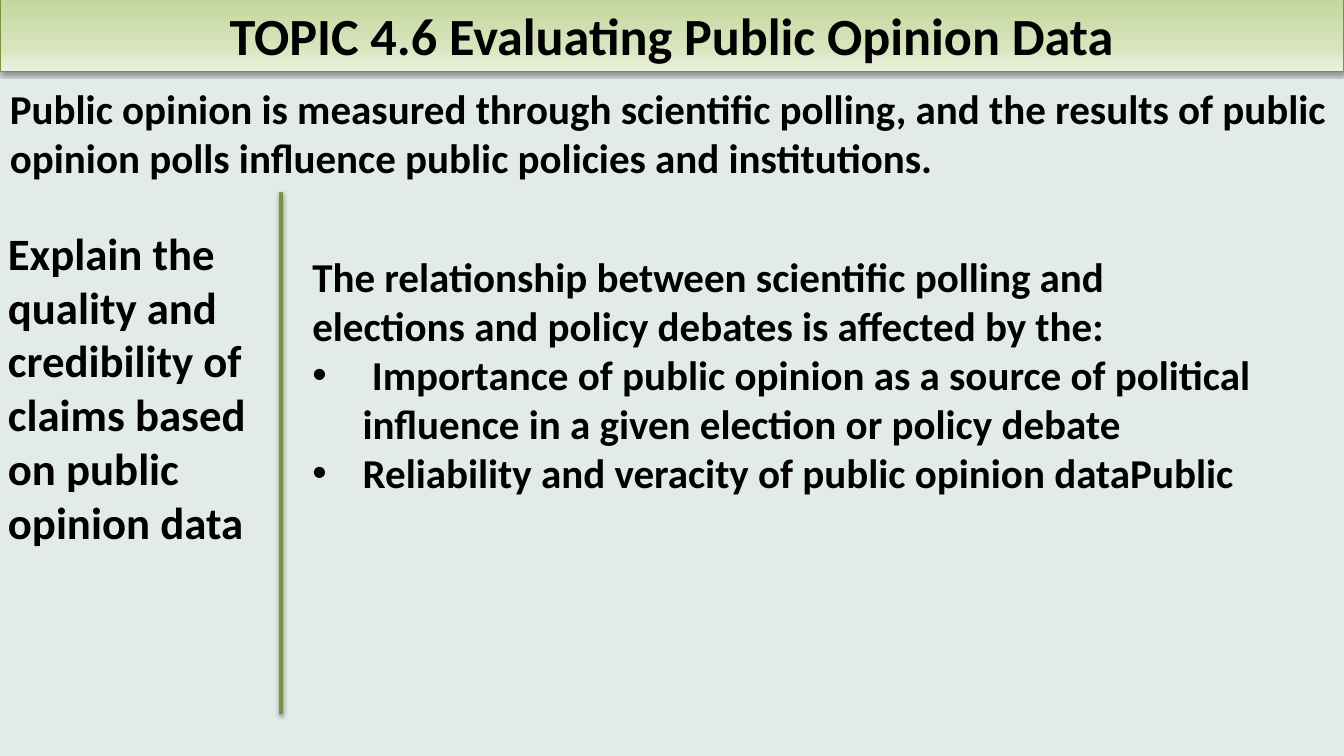
"""Build the slide on evaluating public opinion data."""
import dataclasses

import lxml.etree
import pptx
import pptx.dml.color
import pptx.enum.shapes
import pptx.enum.text
import pptx.oxml
import pptx.oxml.ns
import pptx.util

Cm = pptx.util.Cm
Pt = pptx.util.Pt
RGB = pptx.dml.color.RGBColor.from_string
qn = pptx.oxml.ns.qn

TITLE = "TOPIC 4.6 Evaluating Public Opinion Data"
LEAD = ["Public opinion is measured through scientific polling, and the results of "
        "public opinion polls influence public policies and institutions."]
GOAL = ["Explain the quality and credibility of claims based on public opinion data"]
CLAIM = ["The relationship between scientific polling and",
         "elections and policy debates is affected by the:"]
POINTS = [" Importance of public opinion as a source of political influence in a "
          "given election or policy debate",
          "Reliability and veracity of public opinion dataPublic"]

WIDE, HIGH = 33.87, 19.05
RULE_X, BODY_X = 7.09, 7.62
INDENT = 1.27


@dataclasses.dataclass
class Theme:
    """Hold the colours and type sizes."""
    font: str = "Calibri"
    back: str = "E3EBE9"
    ink: str = "000000"
    edge: str = "77933C"
    band: tuple = ((0, "EBF1DE"), (35, "D7E4BD"), (100, "C3D69B"))
    title: float = 37.3
    goal: float = 32
    body: float = 29.3


THEME = Theme()


def style(para, size):
    """Set the type of a paragraph."""
    font = para.font
    font.name, font.size, font.bold = THEME.font, Pt(size), True
    font.color.rgb = RGB(THEME.ink)


def shade(shape, alpha, dist):
    """Give a shape a soft shadow that falls straight down."""
    props = shape._element.spPr
    for old in props.findall(qn("a:effectLst")):
        props.remove(old)
    effect = lxml.etree.SubElement(props, qn("a:effectLst"))
    drop = lxml.etree.SubElement(
        effect, qn("a:outerShdw"), blurRad=str(Pt(3.1)), dist=str(Pt(dist)),
        dir="5400000", rotWithShape="0")
    tint = lxml.etree.SubElement(drop, qn("a:srgbClr"), val=THEME.ink)
    lxml.etree.SubElement(tint, qn("a:alpha"), val=str(alpha * 1000))


def blend(fill, shape):
    """Fill a shape with the title band's gradient, lightest at the foot."""
    fill.gradient()
    fill.gradient_angle = 90
    stops = shape._element.spPr.find(qn("a:gradFill")).find(qn("a:gsLst"))
    for old in list(stops):
        stops.remove(old)
    for place, tone in THEME.band:
        stop = lxml.etree.SubElement(stops, qn("a:gs"), pos=str(place * 1000))
        lxml.etree.SubElement(stop, qn("a:srgbClr"), val=tone)


def bullet(para):
    """Hang a paragraph behind a round bullet."""
    props = para._p.get_or_add_pPr()
    props.set("marL", str(Cm(INDENT)))
    props.set("indent", str(-Cm(INDENT)))
    font = lxml.etree.Element(qn("a:buFont"), typeface="Arial")
    mark = lxml.etree.Element(qn("a:buChar"), char="•")
    props.insert(0, font)
    props.insert(1, mark)


def write(slide, box, size, lines, points=()):
    """Add a text box of plain lines followed by bulleted points."""
    frame = slide.shapes.add_textbox(*map(Cm, box)).text_frame
    frame.word_wrap = True
    frame.text = "\n".join([*lines, *points])
    for spot, para in enumerate(frame.paragraphs):
        style(para, size)
        if spot >= len(lines):
            bullet(para)


def head(slide):
    """Turn the title placeholder into the band at the top."""
    band = slide.shapes.title
    band.left, band.top, band.width, band.height = map(Cm, (0, -0.05, WIDE, 1.85))
    blend(band.fill, band)
    band.line.color.rgb = RGB(THEME.edge)
    band.line.width = Pt(0.75)
    shade(band, 38, 1.6)
    frame = band.text_frame
    frame.text = TITLE
    frame.auto_size = pptx.enum.text.MSO_AUTO_SIZE.NONE
    frame.vertical_anchor = pptx.enum.text.MSO_ANCHOR.MIDDLE
    para = frame.paragraphs[0]
    para.alignment = pptx.enum.text.PP_ALIGN.CENTER
    style(para, THEME.title)


def divide(slide):
    """Draw the rule between the goal and the body."""
    rule = slide.shapes.add_connector(
        pptx.enum.shapes.MSO_CONNECTOR.STRAIGHT,
        *map(Cm, (RULE_X, 4.83, RULE_X, 17.98)))
    rule.line.color.rgb = RGB(THEME.edge)
    rule.line.width = Pt(3)
    shade(rule, 35, 1.8)


def main():
    """Build and save the slide."""
    deck = pptx.Presentation()
    deck.slide_width, deck.slide_height = Cm(WIDE), Cm(HIGH)
    slide = deck.slides.add_slide(deck.slide_layouts.get_by_name("Title Only"))
    back = slide.background.fill
    back.solid()
    back.fore_color.rgb = RGB(THEME.back)
    head(slide)
    write(slide, (-0.05, 5.56, 6.83, 8.46), THEME.goal, GOAL)
    divide(slide)
    write(slide, (BODY_X, 6.2, WIDE - BODY_X, 6.53), THEME.body, CLAIM, POINTS)
    write(slide, (0, 1.98, WIDE, 2.77), THEME.body, LEAD)
    deck.save("out.pptx")


if __name__ == "__main__":
    main()
